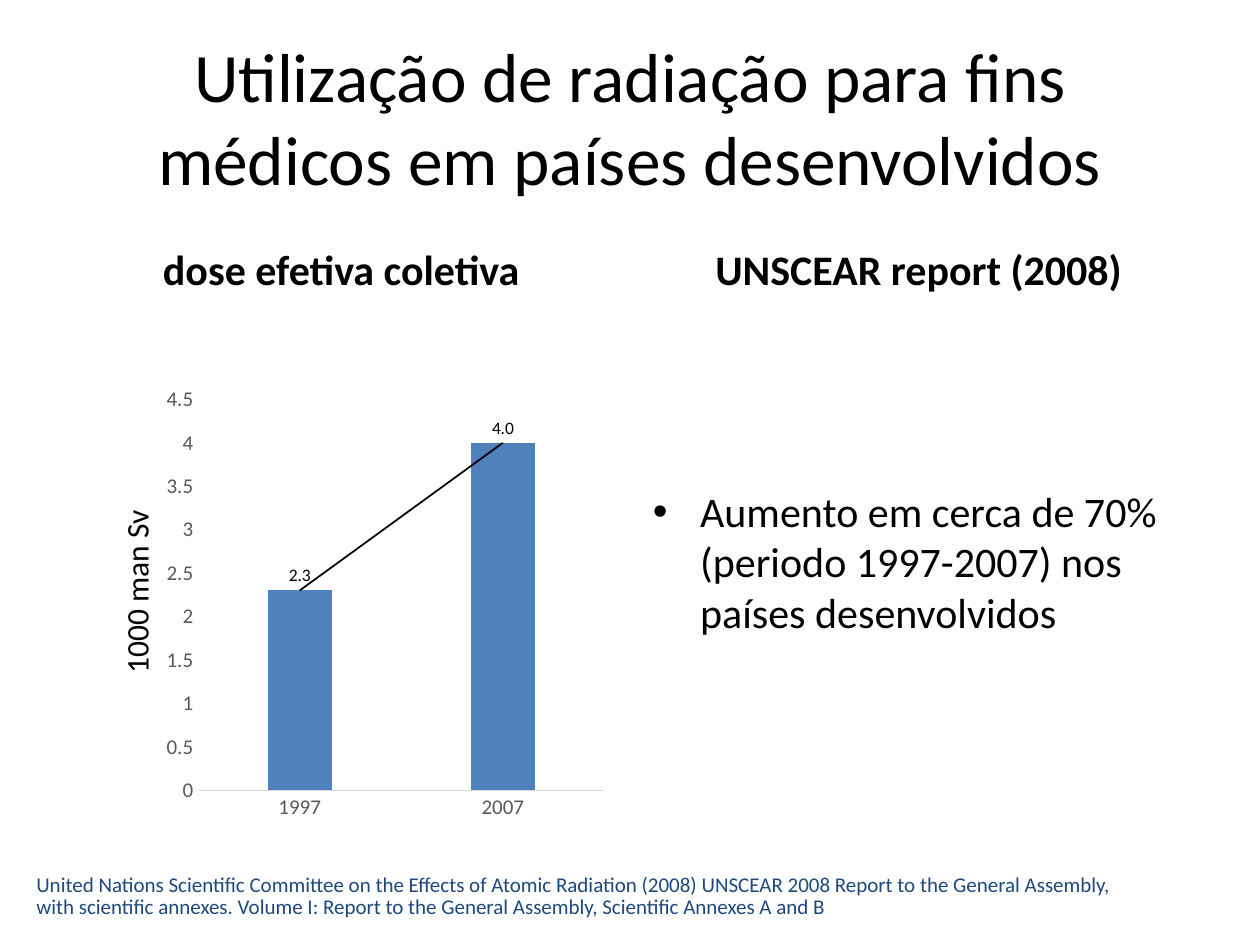
from lxml import etree
from pptx import Presentation
from pptx.chart.data import CategoryChartData
from pptx.dml.color import RGBColor
from pptx.enum.chart import XL_CHART_TYPE, XL_LABEL_POSITION, XL_TICK_MARK
from pptx.enum.text import MSO_ANCHOR, PP_ALIGN
from pptx.oxml import parse_xml
from pptx.oxml.ns import nsdecls, qn
from pptx.util import Pt

COLUMNS = XL_CHART_TYPE.COLUMN_CLUSTERED
OUTSIDE = XL_LABEL_POSITION.OUTSIDE_END
NO_TICK = XL_TICK_MARK.NONE
TOP, MIDDLE, BOTTOM = MSO_ANCHOR.TOP, MSO_ANCHOR.MIDDLE, MSO_ANCHOR.BOTTOM
LEFT, CENTER = PP_ALIGN.LEFT, PP_ALIGN.CENTER

COLORS = {"text": "000000", "bar": "4F81BD", "axis_text": "595959",
          "axis_line": "D9D9D9", "source": "1F497D"}
FONT = "Calibri"


class SlideBuilder:
    def __init__(self, slide):
        self.slide = slide

    def color(self, name):
        return RGBColor.from_string(COLORS[name])

    def style(self, font, size, color="text", bold=False):
        font.name, font.size, font.bold = FONT, Pt(size), bold
        font.color.rgb = self.color(color)

    def text(self, box, lines, size, color="text", bold=False, align=LEFT,
             anchor=TOP, wrap=True, spacing=None):
        shape = self.slide.shapes.add_textbox(*map(Pt, box))
        frame = shape.text_frame
        frame.word_wrap, frame.vertical_anchor = wrap, anchor
        frame.text = "\n".join(lines)
        for paragraph in frame.paragraphs:
            paragraph.alignment, paragraph.line_spacing = align, spacing
            self.style(paragraph.font, size, color, bold)
        return shape

    def bullet(self, box, line, size, indent, top):
        shape = self.text(box, [line], size)
        shape.text_frame.margin_top = Pt(top)
        properties = shape.text_frame.paragraphs[0]._p.get_or_add_pPr()
        properties.set("marL", str(Pt(indent)))
        properties.set("indent", str(-Pt(indent)))
        etree.SubElement(properties, qn("a:buFont")).set("typeface", "Arial")
        etree.SubElement(properties, qn("a:buChar")).set("char", "•")

    def column_chart(self, box, categories, values, maximum, step):
        data = CategoryChartData(number_format="0.0")
        data.categories = categories
        data.add_series("Series 1", values)
        chart = self.slide.shapes.add_chart(COLUMNS, *map(Pt, box), data).chart
        chart.has_legend = chart.has_title = False
        self.style(chart.font, 10)

        plot = chart.plots[0]
        plot.gap_width, plot.overlap, plot.vary_by_categories = 219, -27, False
        plot.has_data_labels = True
        labels = plot.data_labels
        labels.show_value, labels.position = True, OUTSIDE
        labels.number_format, labels.number_format_is_linked = "0.0", False
        self.style(labels.font, 10)

        for axis in (chart.category_axis, chart.value_axis):
            axis.major_tick_mark = axis.minor_tick_mark = NO_TICK
            axis.has_major_gridlines = False
            self.style(axis.tick_labels.font, 12, "axis_text")
        category_line = chart.category_axis.format.line
        category_line.color.rgb = self.color("axis_line")
        category_line.width = Pt(0.75)
        value_axis = chart.value_axis
        value_axis.format.line.fill.background()
        value_axis.minimum_scale, value_axis.maximum_scale = 0, maximum
        value_axis.major_unit = step
        value_axis.tick_labels.number_format = "General"
        value_axis.tick_labels.number_format_is_linked = False

        series = plot.series[0]
        series.format.fill.solid()
        series.format.fill.fore_color.rgb = self.color("bar")
        self.linear_trend(series)

    def linear_trend(self, series):
        trend = parse_xml(
            f'<c:trendline {nsdecls("c", "a")}><c:spPr><a:ln w="{Pt(1)}"><a:solidFill>'
            f'<a:srgbClr val="{COLORS["text"]}"/></a:solidFill></a:ln></c:spPr>'
            '<c:trendlineType val="linear"/><c:dispRSqr val="0"/>'
            '<c:dispEq val="0"/></c:trendline>')
        series._element.find(qn("c:cat")).addprevious(trend)


def main():
    presentation = Presentation()
    presentation.slide_width, presentation.slide_height = Pt(720), Pt(540)
    builder = SlideBuilder(presentation.slides.add_slide(presentation.slide_layouts[6]))

    margin, column_width, right_column = 36, 318, 366
    builder.text((margin, 21.6, 648, 90),
                 ["Utilização de radiação para fins médicos em países desenvolvidos"],
                 39.6, align=CENTER, anchor=MIDDLE)
    headings = {margin: "dose efetiva coletiva", right_column: "UNSCEAR report (2008)"}
    for left, heading in headings.items():
        builder.text((left, 121, column_width, 50.4), [heading], 24,
                     bold=True, align=CENTER, anchor=BOTTOM)

    builder.column_chart((90, 216, 260.6, 257.8), ["1997", "2007"], [2.3, 4.0], 4.5, 0.5)
    axis_title = builder.text((25.2, 324, 108.7, 27.4), ["1000 man Sv"], 18,
                              wrap=False, spacing=0.9)
    axis_title.rotation = 270

    builder.bullet((right_column, 171.4, column_width, 311),
                   "Aumento em cerca de 70% (periodo 1997-2007) nos países desenvolvidos",
                   24, indent=27, top=106)
    builder.text((13.7, 496, 638.6, 33.8),
                 ["United Nations Scientific Committee on the Effects of Atomic Radiation (2008) "
                  "UNSCEAR 2008 Report to the General Assembly,",
                  "with scientific annexes. Volume I: Report to the General Assembly, "
                  "Scientific Annexes A and B"],
                 12, "source", wrap=False, spacing=0.9)
    presentation.save("out.pptx")


if __name__ == "__main__":
    main()
